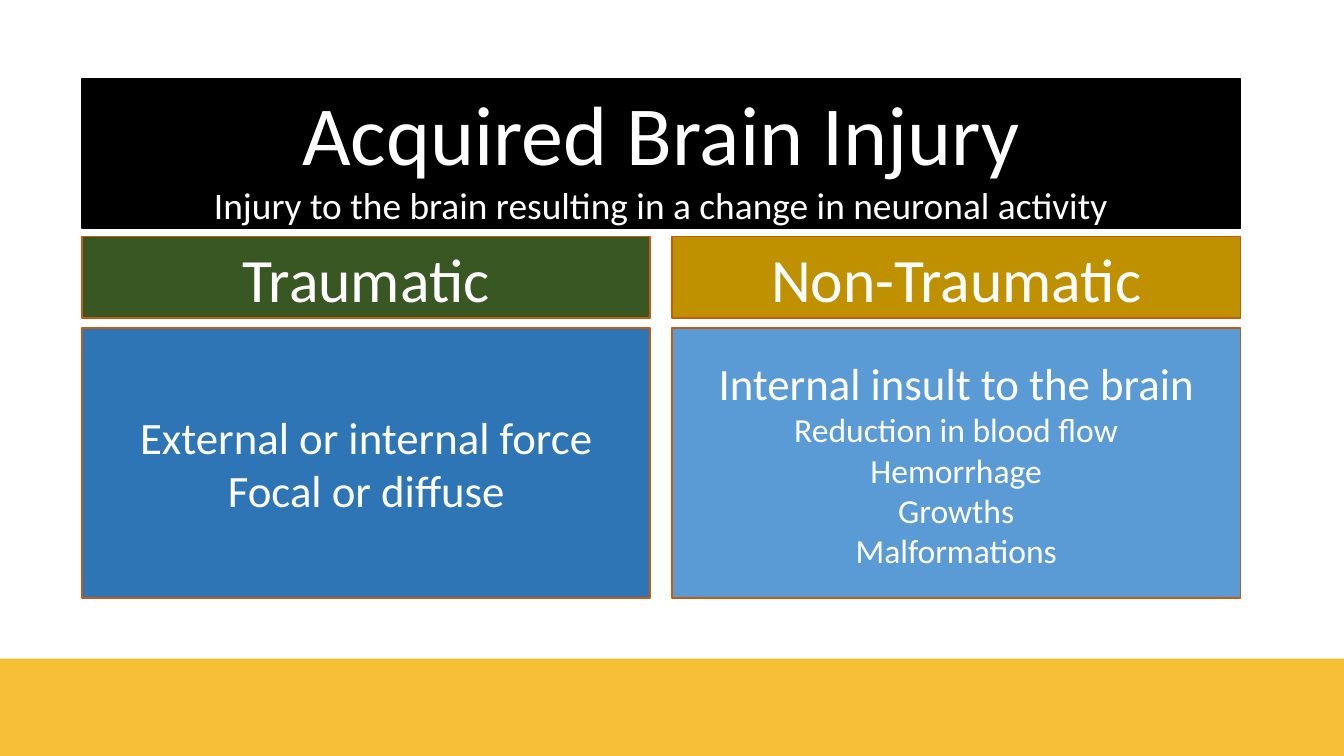
from lxml.etree import SubElement
from pptx import Presentation
from pptx.dml.color import RGBColor
from pptx.enum.shapes import MSO_SHAPE
from pptx.enum.text import MSO_ANCHOR, MSO_AUTO_SIZE, PP_ALIGN
from pptx.oxml.ns import qn
from pptx.util import Inches, Pt

WIDTH = 10
HEIGHT = WIDTH * 9 / 16
COMPARISON_LAYOUT = 4
FONT = "Calibri"
WHITE, BLACK, RUST, AMBER = "FFFFFF", "000000", "C55A11", "F7BF35"

LEFT, CHART_WIDTH, GUTTER = 0.61, 8.62, 0.16
COLUMN_WIDTH = (CHART_WIDTH - GUTTER) / 2
BANNER_ROW = (0.59, 1.11)
HEADING_ROW = (1.76, 0.61)
DETAIL_ROW = (2.44, 2.01)
BAND_TOP = 4.9

BANNER = [
    ("Acquired Brain Injury", 45),
    ("Injury to the brain resulting in a change in neuronal activity", 20),
]
# Each column: heading, heading fill, detail lines, detail fill
COLUMNS = [
    ("Traumatic", "385723",
     [("External or internal force", 24), ("Focal or diffuse", 24)], "2E75B6"),
    ("Non-Traumatic", "BF9000",
     [("Internal insult to the brain", 24), ("Reduction in blood flow", 18),
      ("Hemorrhage", 18), ("Growths", 18), ("Malformations", 18)], "5B9BD5"),
]


def rgb(value):
    return RGBColor.from_string(value)


def place(sp, left, top, width, height):
    sp.left, sp.top = Inches(left), Inches(top)
    sp.width, sp.height = Inches(width), Inches(height)


def paint(sp, fill, line):
    sp.fill.solid()
    sp.fill.fore_color.rgb = rgb(fill)
    sp.line.color.rgb = rgb(line)
    sp.line.width = Pt(1)


def write(sp, lines):
    """Fill a placeholder with centred, unbulleted (text, size) lines."""
    tf = sp.text_frame
    tf.word_wrap = True
    tf.auto_size = MSO_AUTO_SIZE.NONE
    tf.vertical_anchor = MSO_ANCHOR.MIDDLE
    for i, (text, size) in enumerate(lines):
        p = tf.add_paragraph() if i else tf.paragraphs[0]
        pPr = p._p.get_or_add_pPr()
        pPr.set("marL", "0")
        pPr.set("indent", "0")
        SubElement(pPr, qn("a:buNone"))
        p.alignment = PP_ALIGN.CENTER
        p.space_before = Pt(0)
        r = p.add_run()
        r.text = text
        r.font.name, r.font.size, r.font.bold = FONT, Pt(size), False
        r.font.color.rgb = rgb(WHITE)


def add_panel(sp, box, lines, fill, line=RUST):
    place(sp, *box)
    paint(sp, fill, line)
    write(sp, lines)


def add_column(heading, detail, left, content):
    title, title_fill, lines, detail_fill = content
    for sp, (top, height), text, fill in (
        (heading, HEADING_ROW, [(title, 33)], title_fill),
        (detail, DETAIL_ROW, lines, detail_fill),
    ):
        add_panel(sp, (left, top, COLUMN_WIDTH, height), text, fill)


def add_footer_band(s):
    band = s.shapes.add_shape(
        MSO_SHAPE.RECTANGLE, 0, Inches(BAND_TOP),
        Inches(WIDTH), Inches(HEIGHT - BAND_TOP))
    band.shadow.inherit = False
    band.fill.solid()
    band.fill.fore_color.rgb = rgb(AMBER)
    band.line.fill.background()


def main():
    prs = Presentation()
    prs.slide_width, prs.slide_height = Inches(WIDTH), Inches(HEIGHT)
    s = prs.slides.add_slide(prs.slide_layouts[COMPARISON_LAYOUT])
    add_footer_band(s)
    top, height = BANNER_ROW
    add_panel(s.shapes.title, (LEFT, top, CHART_WIDTH, height),
              BANNER, BLACK, BLACK)
    # The layout numbers its placeholders heading, detail, heading, detail
    for i, content in enumerate(COLUMNS):
        add_column(s.placeholders[2 * i + 1], s.placeholders[2 * i + 2],
                   LEFT + i * (COLUMN_WIDTH + GUTTER), content)
    prs.save("out.pptx")


if __name__ == "__main__":
    main()
